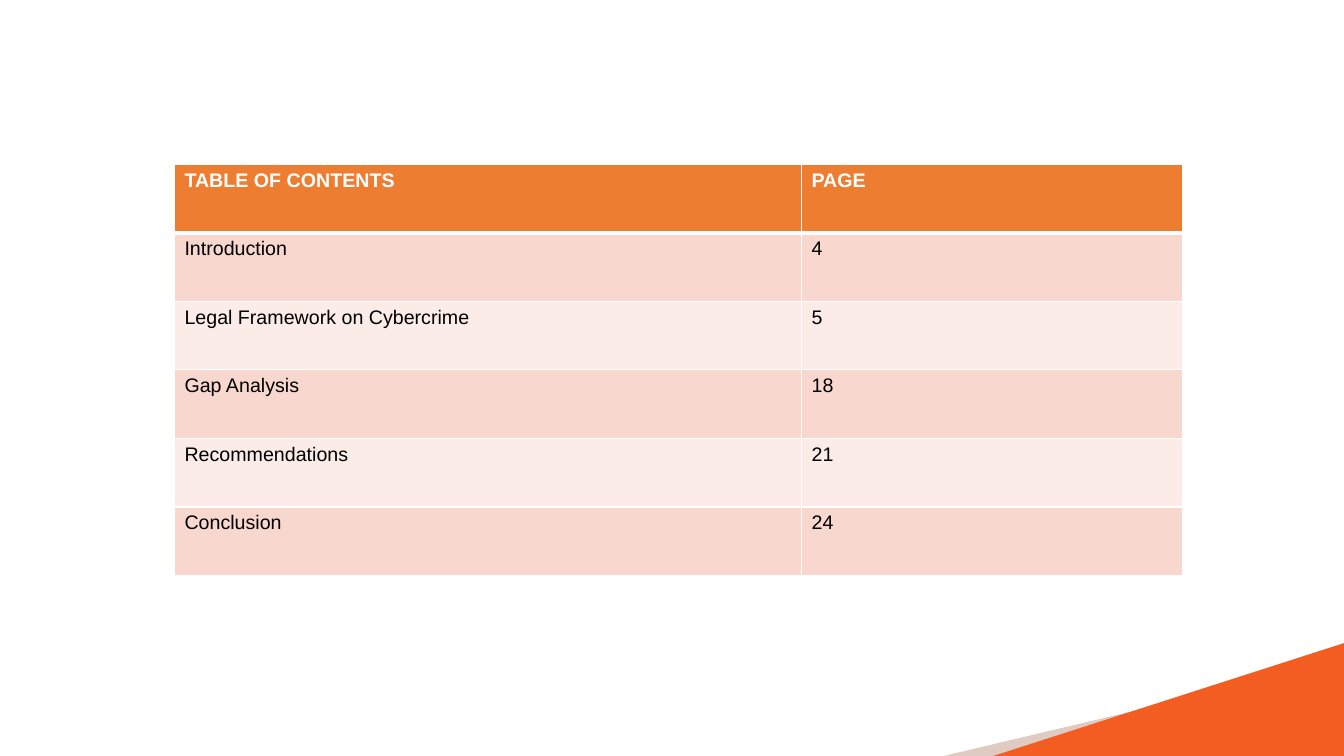
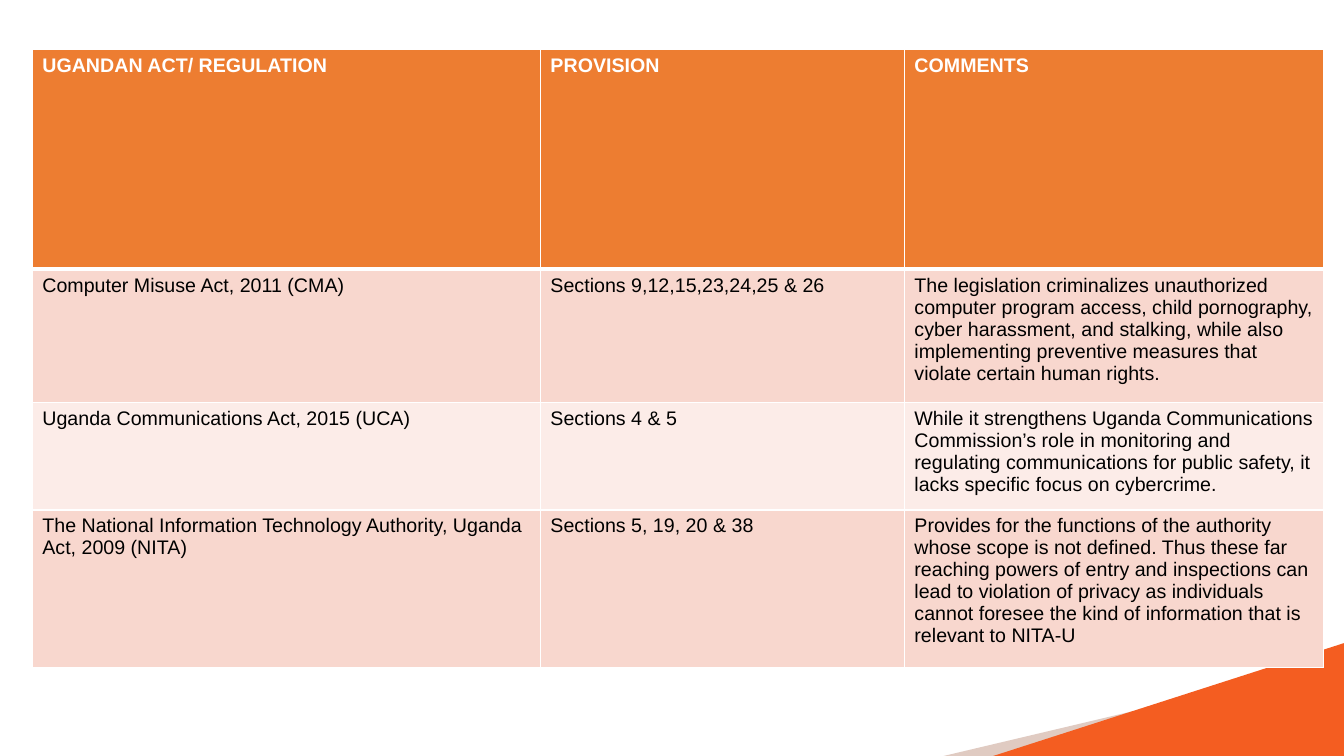
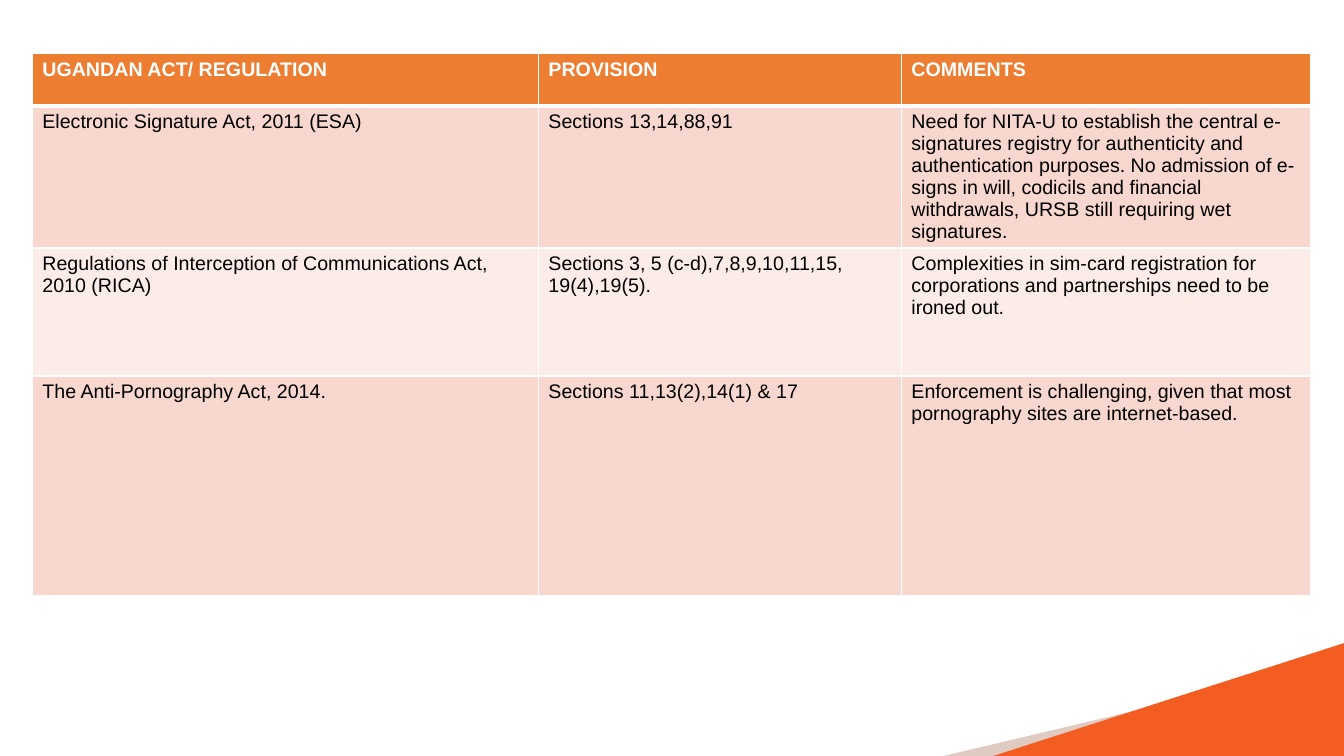
import pptx
import pptx.util
import pptx.dml.color
import pptx.oxml
import pptx.oxml.ns

Inches = pptx.util.Inches
Pt = pptx.util.Pt
RGBColor = pptx.dml.color.RGBColor

COLORS = {
    "paper": "FFFFFF",
    "header": "ED7D31",
    "odd_row": "F8D7CE",
    "even_row": "FCECE8",
    "ink": "000000",
    "back_wedge": "E0CBC2",
    "front_wedge": "F45D21",
}
SLIDE_WIDTH, SLIDE_HEIGHT = 13.33, 7.5
WEDGES = [("back_wedge", 9.36, 6.56), ("front_wedge", 9.85, 6.38)]
ACT_HEADER = ["UGANDAN ACT/ REGULATION", "PROVISION", "COMMENTS"]

TABLES = [
    {
        "left": 1.73,
        "top": 1.63,
        "widths": [6.22, 3.78],
        "heights": [0.68] * 6,
        "rows": [
            ["TABLE OF CONTENTS", "PAGE"],
            ["Introduction", "4"],
            ["Legal Framework on Cybercrime", "5"],
            ["Gap Analysis", "18"],
            ["Recommendations", "21"],
            ["Conclusion", "24"],
        ],
    },
    {
        "left": 0.32,
        "top": 0.49,
        "widths": [5.04, 3.61, 4.16],
        "heights": [2.18, 1.32, 1.07, 1.56],
        "rows": [
            ACT_HEADER,
            [
                "Computer Misuse Act, 2011 (CMA)",
                "Sections 9,12,15,23,24,25 & 26",
                "The legislation criminalizes unauthorized computer program access, "
                "child pornography, cyber harassment, and stalking, while also "
                "implementing preventive measures that violate certain human rights.",
            ],
            [
                "Uganda Communications Act, 2015 (UCA)",
                "Sections 4 & 5",
                "While it strengthens Uganda Communications Commission’s role in "
                "monitoring and regulating communications for public safety, it "
                "lacks specific focus on cybercrime.",
            ],
            [
                "The National Information Technology Authority, Uganda Act, 2009 (NITA)",
                "Sections 5, 19, 20 & 38",
                "Provides for the functions of the authority whose scope is not "
                "defined. Thus these far reaching powers of entry and inspections "
                "can lead to violation of privacy as individuals cannot foresee the "
                "kind of information that is relevant to NITA-U",
            ],
        ],
    },
    {
        "left": 0.32,
        "top": 0.53,
        "widths": [5.02, 3.6, 4.06],
        "heights": [0.52, 1.41, 1.27, 2.18],
        "rows": [
            ACT_HEADER,
            [
                "Electronic Signature Act, 2011 (ESA)",
                "Sections 13,14,88,91",
                "Need for NITA-U to establish the central e-signatures registry for "
                "authenticity and authentication purposes. No admission of e-signs "
                "in will, codicils and financial withdrawals, URSB still requiring "
                "wet signatures.",
            ],
            [
                "Regulations of Interception of Communications Act, 2010 (RICA)",
                "Sections 3, 5 (c-d),7,8,9,10,11,15, 19(4),19(5).",
                "Complexities in sim-card registration for corporations and "
                "partnerships need to be ironed out.",
            ],
            [
                "The Anti-Pornography Act, 2014.",
                "Sections 11,13(2),14(1) & 17",
                "Enforcement is challenging, given that most pornography sites are "
                "internet-based.",
            ],
        ],
    },
]


def color(name):
    return RGBColor.from_string(COLORS[name])


def add_border(cell, side, points):
    namespace = pptx.oxml.ns.nsdecls("a")
    line = pptx.oxml.parse_xml(
        f'<a:{side} {namespace} w="{Pt(points)}"><a:solidFill>'
        f'<a:srgbClr val="{COLORS["paper"]}"/></a:solidFill></a:{side}>'
    )
    cell._tc.get_or_add_tcPr().append(line)


deck = pptx.Presentation()
deck.slide_width = Inches(SLIDE_WIDTH)
deck.slide_height = Inches(SLIDE_HEIGHT)

for content in TABLES:
    page = deck.slides.add_slide(deck.slide_layouts[6])
    page.background.fill.solid()
    page.background.fill.fore_color.rgb = color("paper")

    for wedge_color, wedge_left, wedge_top in WEDGES:
        outline = page.shapes.build_freeform(Inches(SLIDE_WIDTH), Inches(wedge_top))
        outline.add_line_segments(
            [
                (Inches(SLIDE_WIDTH), Inches(SLIDE_HEIGHT)),
                (Inches(wedge_left), Inches(SLIDE_HEIGHT)),
            ]
        )
        wedge = outline.convert_to_shape()
        wedge.shadow.inherit = False
        wedge.fill.solid()
        wedge.fill.fore_color.rgb = color(wedge_color)
        wedge.line.fill.background()

    widths, heights = content["widths"], content["heights"]
    table = page.shapes.add_table(
        len(heights),
        len(widths),
        Inches(content["left"]),
        Inches(content["top"]),
        Inches(sum(widths)),
        Inches(sum(heights)),
    ).table
    for column, width in zip(table.columns, widths):
        column.width = Inches(width)

    for row_index, texts in enumerate(content["rows"]):
        table.rows[row_index].height = Inches(heights[row_index])
        is_header = row_index == 0
        row_color = "header" if is_header else ("even_row", "odd_row")[row_index % 2]
        for column_index, text in enumerate(texts):
            cell = table.cell(row_index, column_index)
            add_border(cell, "lnL", 1)
            add_border(cell, "lnR", 1)
            add_border(cell, "lnT", 3 if row_index == 1 else 1)
            add_border(cell, "lnB", 3 if is_header else 1)
            cell.fill.solid()
            cell.fill.fore_color.rgb = color(row_color)
            cell.text = text
            font = cell.text_frame.paragraphs[0].font
            font.name = "Arial"
            font.size = Pt(14)
            font.bold = is_header
            font.color.rgb = color("paper" if is_header else "ink")

deck.save("out.pptx")
